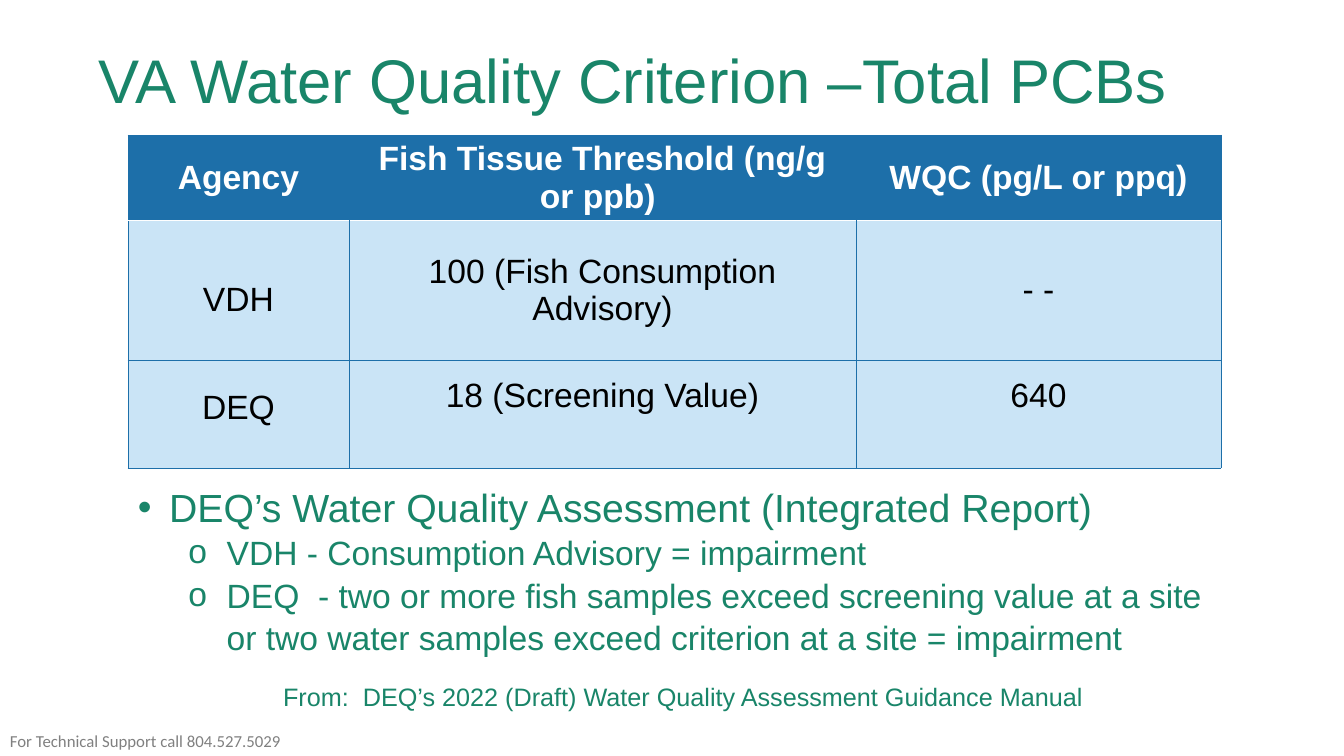
"""Build the slide on Virginia's water quality criterion for total PCBs."""
import dataclasses

import lxml.etree
import pptx
import pptx.dml.color
import pptx.enum.text
import pptx.oxml.ns
import pptx.util

Inches = pptx.util.Inches
Anchor = pptx.enum.text.MSO_ANCHOR
Align = pptx.enum.text.PP_ALIGN


@dataclasses.dataclass(frozen=True)
class Theme:
    green: str = "198569"
    blue: str = "1D6FA9"
    pale: str = "CAE4F6"
    white: str = "FFFFFF"
    black: str = "000000"
    grey: str = "808080"
    title: int = 44
    lead: int = 28
    body: int = 24
    source: int = 18
    support: int = 12


theme = Theme()


def write(frame, text, size, color, font="Arial", bold=False, align=Align.LEFT,
          spacing=None, level=0, left=0, hanging=0, bullet=None):
    """Write one paragraph into a text frame, filling its empty first one."""
    paragraph = frame.paragraphs[0]
    if paragraph.runs:
        paragraph = frame.add_paragraph()
    paragraph.alignment = align
    paragraph.level = level
    if spacing:
        paragraph.line_spacing = spacing
    properties = paragraph._p.get_or_add_pPr()
    properties.set("marL", str(Inches(left)))
    properties.set("indent", str(Inches(-hanging)))
    if bullet:
        bullet_font = lxml.etree.SubElement(properties, pptx.oxml.ns.qn("a:buFont"))
        bullet_font.set("typeface", font)
        lxml.etree.SubElement(properties, pptx.oxml.ns.qn("a:buChar")).set("char", bullet)
    run = paragraph.add_run()
    run.text = text
    run.font.name = font
    run.font.size = pptx.util.Pt(size)
    run.font.bold = bold
    run.font.color.rgb = pptx.dml.color.RGBColor.from_string(color)


def draw_border(cell, side, color, width):
    """Draw one side of a table cell, or hide it when the colour is None."""
    line = lxml.etree.SubElement(cell._tc.get_or_add_tcPr(), pptx.oxml.ns.qn("a:ln" + side))
    line.set("w", str(pptx.util.Pt(width)))
    if color is None:
        lxml.etree.SubElement(line, pptx.oxml.ns.qn("a:noFill"))
    else:
        fill = lxml.etree.SubElement(line, pptx.oxml.ns.qn("a:solidFill"))
        lxml.etree.SubElement(fill, pptx.oxml.ns.qn("a:srgbClr")).set("val", color)


deck = pptx.Presentation()
deck.slide_width, deck.slide_height = Inches(13.33), Inches(7.5)
slide = deck.slides.add_slide(deck.slide_layouts[5])

heading = slide.shapes.title
heading.left, heading.top = Inches(-0.38), Inches(0.2)
heading.width, heading.height = Inches(13.33), Inches(1.25)
heading.text_frame.vertical_anchor = Anchor.MIDDLE
write(heading.text_frame, "VA Water Quality Criterion –Total PCBs",
      size=theme.title, color=theme.green, align=Align.CENTER, spacing=0.9)

thresholds = [
    ["Agency", "Fish Tissue Threshold (ng/g or ppb) ", "WQC (pg/L or ppq)"],
    ["VDH", "100 (Fish Consumption Advisory)", "- -"],
    ["DEQ", "18 (Screening Value)", "640"],
]
criteria = slide.shapes.add_table(
    3, 3, Inches(1.27), Inches(1.34), Inches(10.84), Inches(3)).table
for column, width in zip(criteria.columns, (2.19, 5.03, 3.62)):
    column.width = Inches(width)
for row, height in zip(criteria.rows, (0.54, 1.39, 1.07)):
    row.height = Inches(height)

for r, values in enumerate(thresholds):
    header = r == 0
    for c, value in enumerate(values):
        cell = criteria.cell(r, c)
        agency = c == 0 and not header
        cell.vertical_anchor = Anchor.BOTTOM if agency else Anchor.MIDDLE
        cell.margin_bottom = Inches(0.41 if agency or r == 2 else 0.05)
        draw_border(cell, "L", None if header and c > 0 else theme.blue, 0.5)
        draw_border(cell, "R", None if header and c < 2 else theme.blue, 0.5)
        draw_border(cell, "T", theme.white if r == 1 else theme.blue, 1 if r == 1 else 0.5)
        draw_border(cell, "B", theme.white if header else theme.blue, 1 if header else 0.5)
        cell.fill.solid()
        cell.fill.fore_color.rgb = pptx.dml.color.RGBColor.from_string(
            theme.blue if header else theme.pale)
        write(cell.text_frame, value, size=theme.body, bold=header, align=Align.CENTER,
              color=theme.white if header else theme.black)

lead = dict(size=theme.lead, color=theme.green, left=0.31, hanging=0.31,
            bullet="•", spacing=1.05)
rule = dict(size=theme.body, color=theme.green, left=0.88, hanging=0.38,
            bullet="o", level=1, spacing=1.05)
source = dict(size=theme.source, color=theme.green, left=0.5, level=1)
support = dict(size=theme.support, color=theme.grey, font="Calibri")
notes = [
    ((1.27, 4.72, 10.84, 1.78), True, [
        ("DEQ’s Water Quality Assessment (Integrated Report)", lead),
        ("VDH - Consumption Advisory = impairment", rule),
        ("DEQ  - two or more fish samples exceed screening value at a site "
         "or two water samples exceed criterion at a site = impairment", rule),
    ]),
    ((2.21, 6.71, 8.67, 0.4), True, [
        ("From:  DEQ’s 2022 (Draft) Water Quality Assessment Guidance Manual", source),
    ]),
    ((0, 7.2, 2.92, 0.3), False, [
        ("For Technical Support call 804.527.5029", support),
    ]),
]
for place, wraps, lines in notes:
    frame = slide.shapes.add_textbox(*map(Inches, place)).text_frame
    frame.word_wrap = wraps
    frame.auto_size = pptx.enum.text.MSO_AUTO_SIZE.SHAPE_TO_FIT_TEXT
    for text, style in lines:
        write(frame, text, **style)

deck.save("out.pptx")
